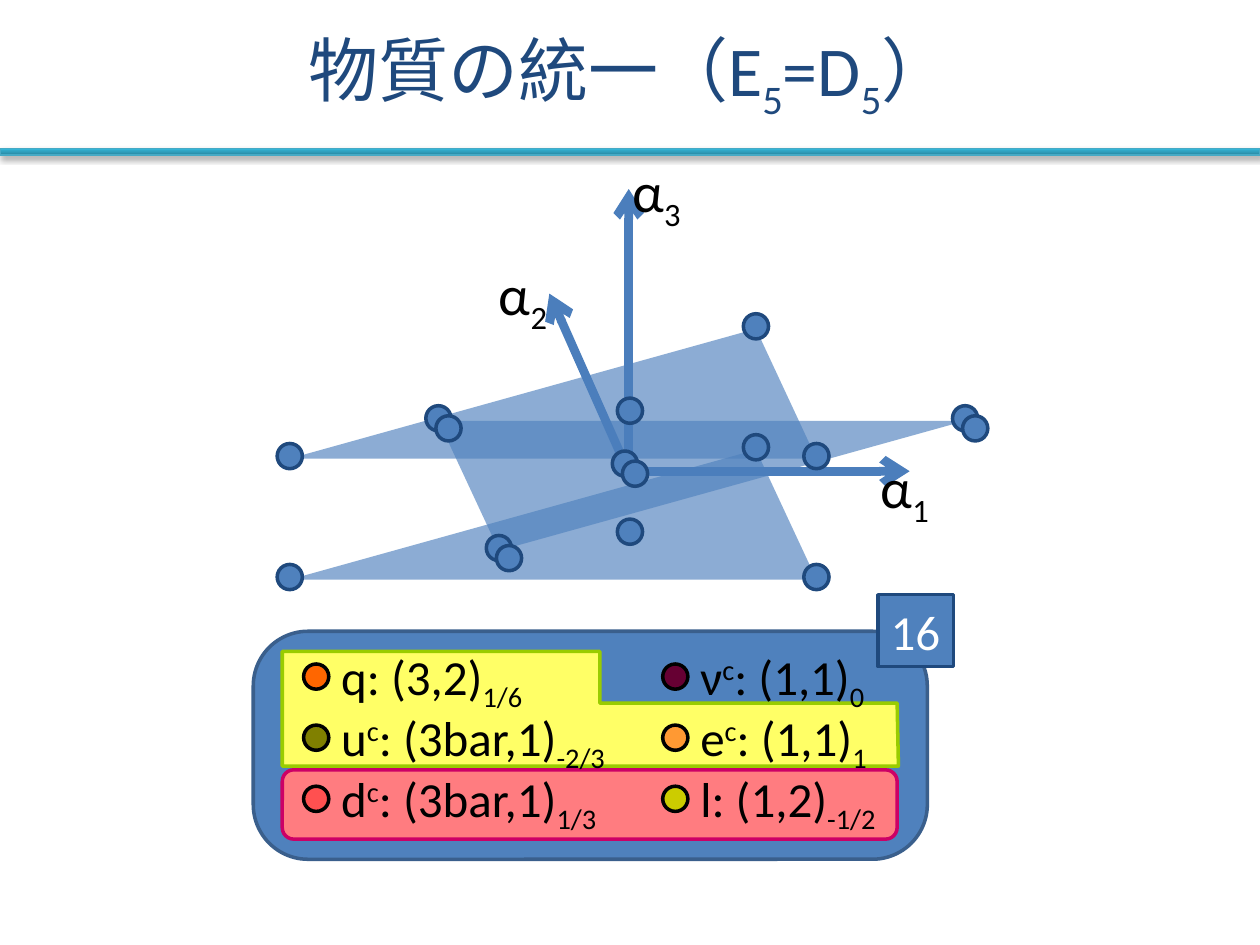
from lxml import etree
from pptx import Presentation
from pptx import util as u
from pptx.dml.color import RGBColor
from pptx.enum import shapes, text
from pptx.oxml import ns

THEME = dict(
    font="Calibri", blue="4F81BD", navy="1F497D", arrow="4B7EBC", edge="3A5F8C",
    black="000000", white="FFFFFF", lemon="FFFF66", lime="99CC00",
    rose="FF7C80", pink="CC0066", teal="46AAC5", dark="2A88A2", light="34B4D6",
    title=40, axis=32, body=28, line=2, thick=5,
)

TITLE = [("物質の統一（E", 0), ("5", -25), ("=D", 0), ("5", -25), ("）", 0)]
ROWS = [
    [("FF6600", [("q: (3,2)", 0), ("1/6", -25)], 1.71),
     ("660033", [("ν", 0), ("c", 30), (": (1,1)", 0), ("0", -25)], 1.55)],
    [("808000", [("u", 0), ("c", 30), (": (3bar,1)", 0), ("-2/3", -25)], 2.4),
     ("FF9933", [("e", 0), ("c", 30), (": (1,1)", 0), ("1", -25)], 1.63)],
    [("FF5050", [("d", 0), ("c", 30), (": (3bar,1)", 0), ("1/3", -25)], 2.32),
     ("CCCC00", [("l: (1,2)", 0), ("-1/2", -25)], 1.67)],
]
AXES = [
    ("1", (5, 3.74), (7.22, 3.74), (6.89, 3.54)),
    ("3", (4.99, 3.73), (4.99, 1.5), (4.92, 1.19)),
    ("2", (4.99, 3.75), (4.36, 2.33), (3.86, 2.01)),
]
CORNERS = [(1, -0.67), (1.48, 0.36), (-2.7, 0.36)]
LOW, HIGH = (5, 4.22, 1), (5, 3.26, 1)
BACK, FRONT = (4.96, 3.68, -1), (5.04, 3.76, -1)
PANEL = [(2.24, 6.08), (2.24, 5.17), (4.76, 5.17), (4.76, 5.58), (7.12, 5.58), (7.13, 6.08)]
DOT = 0.2


def cm(inch):
    return u.Cm(inch * 2.54)


def color(name):
    return RGBColor.from_string(THEME.get(name, name))


def paint(shape, fill, edge=None, width=THEME["line"]):
    shape.shadow.inherit = False
    shape.fill.solid()
    shape.fill.fore_color.rgb = color(fill)
    if edge:
        shape.line.color.rgb = color(edge)
        shape.line.width = u.Pt(width)
    else:
        shape.line.fill.background()
    return shape


def box(tree, kind, area, *style):
    return paint(tree.add_shape(kind, *map(cm, area)), *style)


def dot(tree, x, y, fill="blue", edge="navy"):
    box(tree, shapes.MSO_SHAPE.OVAL, (x - DOT / 2, y - DOT / 2, DOT, DOT), fill, edge)


def outline(tree, points, *style):
    pts = [(cm(x), cm(y)) for x, y in points]
    pen = tree.build_freeform(*pts[0])
    pen.add_line_segments(pts[1:], close=True)
    return paint(pen.convert_to_shape(), *style)


def write(shape, parts, size, ink="black", align=text.PP_ALIGN.LEFT, wrap=False):
    frame = shape.text_frame
    frame.word_wrap = wrap
    para = frame.paragraphs[0]
    para.alignment = align
    for words, base in parts:
        run = para.add_run()
        run.text = words
        run.font.name = THEME["font"]
        run.font.size = u.Pt(THEME[size])
        run.font.color.rgb = color(ink)
        if base:
            run.font._element.set("baseline", str(base * 1000))
    return frame


def label(tree, area, parts, size):
    write(tree.add_textbox(*map(cm, area)), parts, size)


def arrow(tree, start, end):
    line = tree.add_connector(shapes.MSO_CONNECTOR.STRAIGHT, *map(cm, start + end))
    line.line.color.rgb = color("arrow")
    line.line.width = u.Pt(THEME["thick"])
    etree.SubElement(line.line._get_or_add_ln(), ns.qn("a:tailEnd"), type="arrow")
    etree.SubElement(line._element.spPr, ns.qn("a:effectLst"))


def spots(kite):
    x, y, sign = kite
    return [(x + sign * dx, y + sign * dy) for dx, dy in CORNERS]


def dots(tree, kite):
    for x, y in spots(kite) + [kite[:2]]:
        dot(tree, x, y)


def plane(tree, kite):
    face = outline(tree, [(x, y + 0.02) for x, y in spots(kite)], "blue")
    tint = face._element.spPr.find(".//" + ns.qn("a:srgbClr"))
    etree.SubElement(tint, ns.qn("a:alpha"), val="65000")


def rule(tree):
    bar = box(tree, shapes.MSO_SHAPE.RECTANGLE, (0, 1.18, 10, 0.05), "light", "teal", 0.75)
    bar.fill.gradient()
    bar.fill.gradient_angle = 90
    for stop, name in zip(bar.fill.gradient_stops, ("dark", "light")):
        stop.color.rgb = color(name)
    glow = etree.SubElement(bar._element.spPr.find(ns.qn("a:effectLst")), ns.qn("a:outerShdw"),
                            blurRad="40000", dist="23000", dir="5400000", rotWithShape="0")
    tint = etree.SubElement(glow, ns.qn("a:srgbClr"), val=THEME["black"])
    etree.SubElement(tint, ns.qn("a:alpha"), val="35000")


def legend(tree):
    for i, row in enumerate(ROWS):
        group = tree.add_group_shape().shapes
        y = 5.37 + 0.485 * i
        for x, (fill, parts, width) in zip((2.51, 5.36), row):
            dot(group, x, y, fill, "black")
            label(group, (x + 0.1, y - 0.29, width, 0.57), parts, "body")


def main():
    deck = Presentation()
    deck.slide_width, deck.slide_height = cm(10), cm(7.5)
    tree = deck.slides.add_slide(deck.slide_layouts[6]).shapes
    kind = shapes.MSO_SHAPE

    rule(tree)
    card = box(tree, kind.ROUNDED_RECTANGLE, (2.01, 5.01, 5.35, 1.81), "blue", "edge")
    card.adjustments[0] = 0.24
    for kite in (LOW, BACK, HIGH):
        plane(tree, kite)
    outline(tree, PANEL, "lemon", "lime")
    box(tree, kind.ROUNDED_RECTANGLE, (2.24, 6.11, 4.88, 0.55), "rose", "pink")

    head = tree.add_textbox(0, 0, cm(10), cm(1.18))
    frame = write(head, TITLE, "title", "navy", text.PP_ALIGN.CENTER, True)
    frame.vertical_anchor = text.MSO_ANCHOR.MIDDLE

    legend(tree)
    for _, start, end, _ in AXES:
        arrow(tree, start, end)
    for kite in (LOW, BACK, FRONT):
        dots(tree, kite)
    for sub, _, _, place in AXES:
        label(tree, place + (0.61, 0.64), [("α", 0), (sub, -25)], "axis")
    dots(tree, HIGH)

    badge = box(tree, kind.RECTANGLE, (6.97, 4.72, 0.6, 0.57), "blue", "navy")
    write(badge, [("16", 0)], "body", "white")
    deck.save("out.pptx")


if __name__ == "__main__":
    main()
